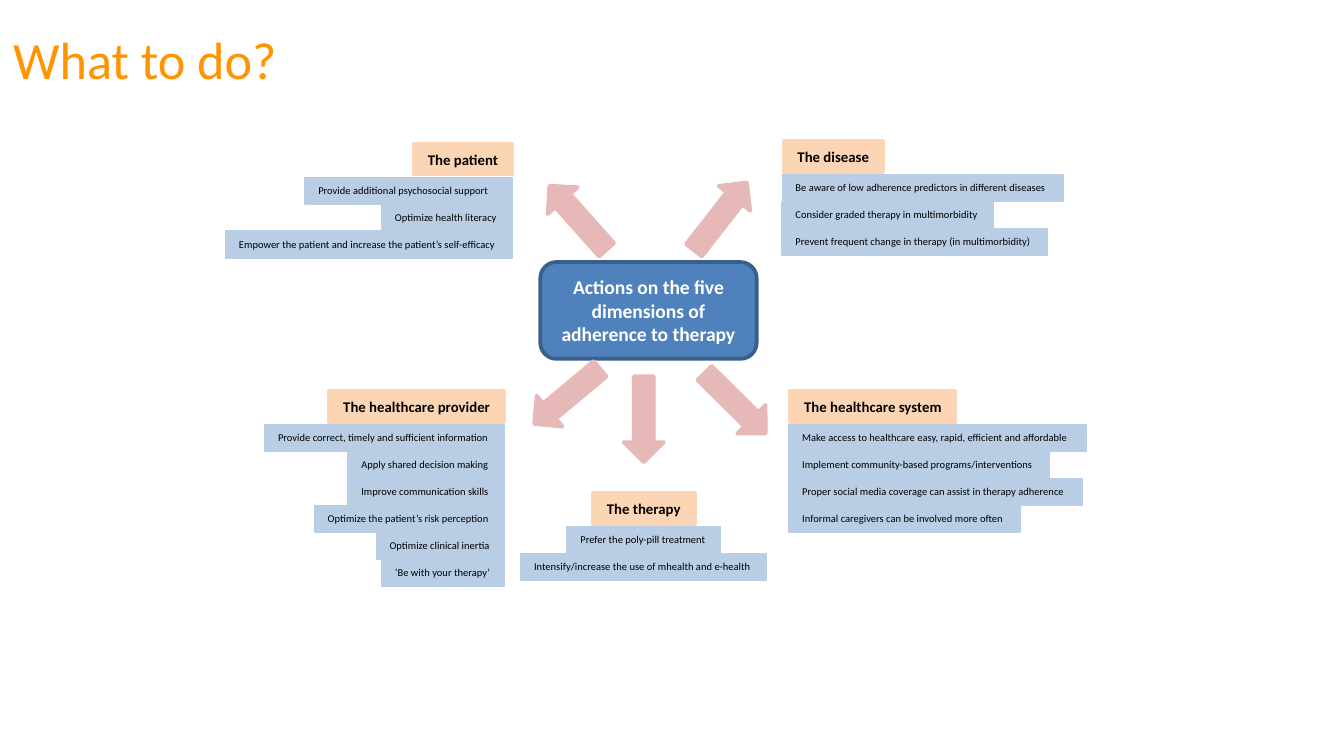
"""Build a slide showing actions on the five dimensions of therapy adherence."""
from pptx import Presentation
from pptx.dml.color import RGBColor
from pptx.enum.shapes import MSO_SHAPE
from pptx.enum.text import MSO_ANCHOR, MSO_AUTO_SIZE, PP_ALIGN
from pptx.util import Inches, Pt

COLORS = {
    "title": "FF9300", "header": "FCD5B5", "action": "B9CDE5", "arrow": "E6B9B8",
    "center": "4F81BD", "center_line": "3A5F8C", "dark": "000000", "light": "FFFFFF",
}
FONT = "Calibri"
TITLE = "What to do?"
CENTER = "Actions on the five dimensions of adherence to therapy"
GROUPS = [
    {"header": ("The patient", 0.73), "side": "right", "x": 3.81, "top": 1.07, "actions": [
        ("Provide additional psychosocial support", 1.54),
        ("Optimize health literacy", 0.97),
        ("Empower the patient and increase the patient’s self-efficacy", 2.13)]},
    {"header": ("The disease", 0.74), "side": "left", "x": 5.82, "top": 1.05, "actions": [
        ("Be aware of low adherence predictors in different diseases", 2.09),
        ("Consider graded therapy in multimorbidity", 1.57),
        ("Prevent frequent change in therapy (in multimorbidity)", 1.97)]},
    {"header": ("The healthcare provider", 1.3), "side": "right", "x": 3.75, "top": 2.91, "actions": [
        ("Provide correct, timely and sufficient information", 1.78),
        ("Apply shared decision making", 1.16),
        ("Improve communication skills", 1.16),
        ("Optimize the patient’s risk perception", 1.41),
        ("Optimize clinical inertia", 0.95),
        ("‘Be with your therapy’", 0.91)]},
    {"header": ("The therapy", 0.76), "side": "middle", "x": 4.79, "top": 3.67, "actions": [
        ("Prefer the poly-pill treatment", 1.14),
        ("Intensify/increase the use of mhealth and e-health", 1.83)]},
    {"header": ("The healthcare system", 1.23), "side": "left", "x": 5.87, "top": 2.91, "actions": [
        ("Make access to healthcare easy, rapid, efficient and affordable", 2.21),
        ("Implement community-based programs/interventions", 1.94),
        ("Proper social media coverage can assist in therapy adherence", 2.18),
        ("Informal caregivers can be involved more often", 1.72)]},
]
ARROWS = [(4.15, 1.3, 138.2), (5.21, 1.29, 218), (5.32, 2.68, 314.6),
          (4.07, 2.63, 50.1), (4.64, 2.8, 0)]
ARROW_SIZE = (0.3, 0.64)
SHIFT = {"left": 0, "middle": 0.5, "right": 1}
HEADER_H, HEADER_STEP, ACTION_H = 0.23, 0.25, 0.2
HEADER_INDENT = 0.01


def add_shape(slide, kind, box, fill, line, width):
    sp = slide.shapes.add_shape(kind, *map(Inches, box))
    sp.shadow.inherit = False
    sp.fill.solid()
    sp.fill.fore_color.rgb = RGBColor.from_string(COLORS[fill])
    sp.line.color.rgb = RGBColor.from_string(COLORS[line])
    sp.line.width = Pt(width)
    return sp


def set_text(sp, text, size, color, align=PP_ALIGN.LEFT, bold=False, anchor=MSO_ANCHOR.TOP):
    tf = sp.text_frame
    tf.word_wrap = True
    tf.vertical_anchor = anchor
    p = tf.paragraphs[0]
    p.text = text
    p.alignment = align
    p.font.name = FONT
    p.font.size = Pt(size)
    p.font.bold = bold
    p.font.color.rgb = RGBColor.from_string(COLORS[color])
    return tf


def add_label(slide, x, side, label, top, height, fill, line_width, size, **style):
    text, width = label
    left = x - width * SHIFT[side]
    sp = add_shape(slide, MSO_SHAPE.RECTANGLE, (left, top, width, height), fill, fill, line_width)
    tf = set_text(sp, text, size, "dark", **style)
    tf.word_wrap = False
    tf.auto_size = MSO_AUTO_SIZE.SHAPE_TO_FIT_TEXT


def add_group(slide, group):
    x, side, top = group["x"], group["side"], group["top"]
    header_x = x + HEADER_INDENT if side == "left" else x
    add_label(slide, header_x, side, group["header"], top, HEADER_H, "header", 2, 7.9,
              align=PP_ALIGN.CENTER, bold=True)
    for i, action in enumerate(group["actions"]):
        row_top = top + HEADER_STEP + i * ACTION_H
        add_label(slide, x, side, action, row_top, ACTION_H, "action", 0.75, 5.6)


def main():
    prs = Presentation()
    prs.slide_width = Inches(10)
    prs.slide_height = prs.slide_width * 9 // 16
    slide = prs.slides.add_slide(prs.slide_layouts[6])
    for group in GROUPS:
        add_group(slide, group)
    center = add_shape(slide, MSO_SHAPE.ROUNDED_RECTANGLE, (4.02, 1.95, 1.61, 0.72),
                       "center", "center_line", 2)
    set_text(center, CENTER, 10.5, "light", PP_ALIGN.CENTER, True, MSO_ANCHOR.MIDDLE)
    for left, top, angle in ARROWS:
        arrow = add_shape(slide, MSO_SHAPE.DOWN_ARROW, (left, top, *ARROW_SIZE), "arrow", "arrow", 2)
        arrow.rotation = angle
    title = slide.shapes.add_textbox(*map(Inches, (0, 0.15, 9.45, 0.45)))
    set_text(title, TITLE, 28, "title")
    prs.save("out.pptx")


if __name__ == "__main__":
    main()
